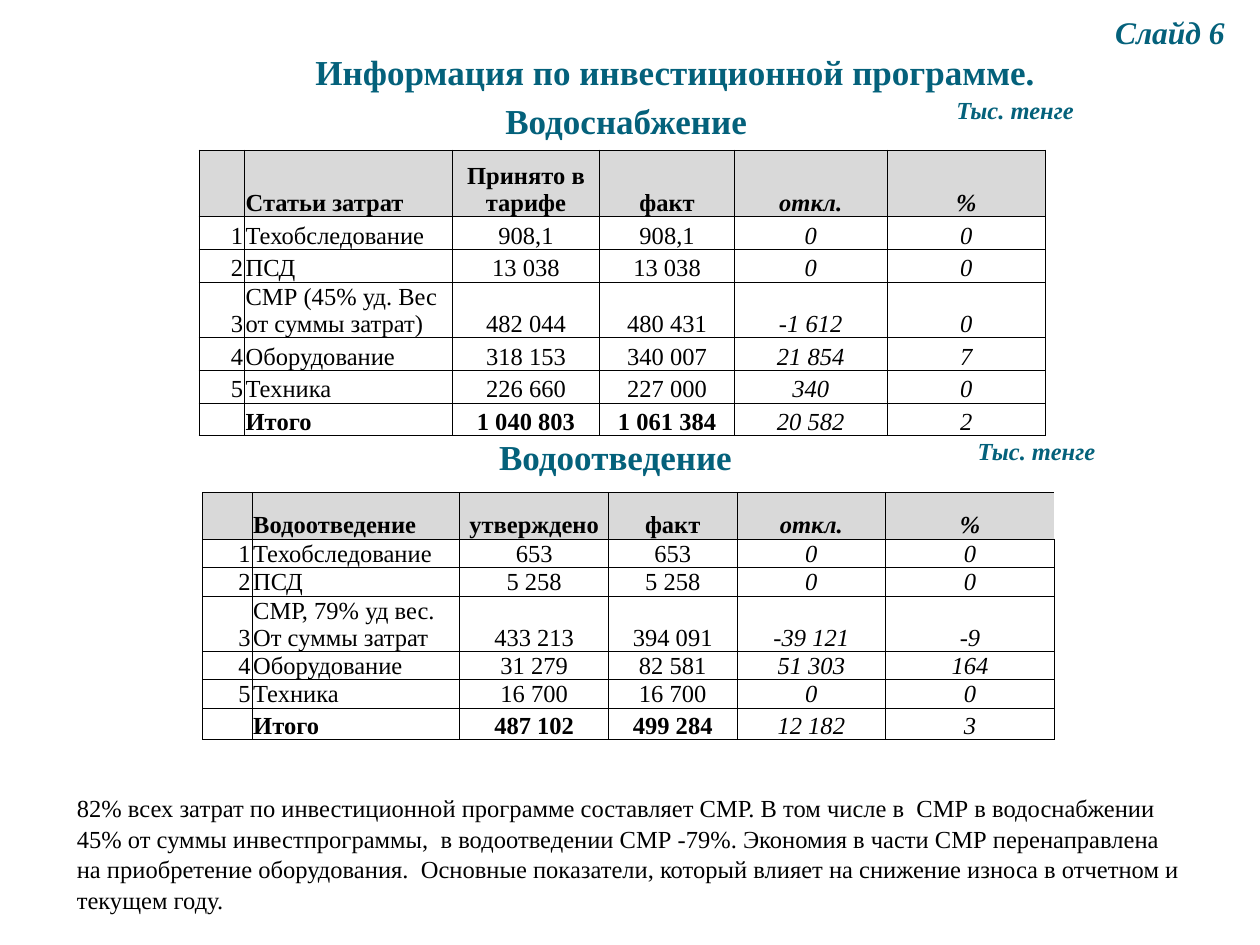
from dataclasses import dataclass

import lxml.etree
import pptx
import pptx.dml.color
import pptx.enum.text
import pptx.oxml.ns
import pptx.util

Inches = pptx.util.Inches
Align = pptx.enum.text.PP_ALIGN
Anchor = pptx.enum.text.MSO_ANCHOR
qn = pptx.oxml.ns.qn


@dataclass(frozen=True)
class Theme:
    face: str = "Times New Roman"
    teal: str = "04617B"
    black: str = "000000"
    grey: str = "D9D9D9"
    head: int = 20
    mark: int = 18
    text: int = 14
    rule: float = 0.5


@dataclass(frozen=True)
class Label:
    text: str
    box: tuple[float, float, float, float]
    size: int
    align: Align
    slant: bool = False


@dataclass(frozen=True)
class Grid:
    left: float
    top: float
    cols: list[float]
    rows: list[float]
    data: list[tuple[str, ...]]
    open_end: bool = False  # header has no line at its right end


THEME = Theme()

TITLE = Label("Информация по инвестиционной программе.",
              (1.61, 0.35, 7.5, 0.47), THEME.head, Align.CENTER)

LABELS = [
    Label("Тыс. тенге", (7.52, 0.52, 1.97, 0.73), THEME.text, Align.JUSTIFY, True),
    Label("Водоотведение", (1.15, 3.16, 7.47, 0.97), THEME.head, Align.CENTER),
    Label("Водоснабжение", (1.15, 0.8, 7.64, 0.35), THEME.head, Align.CENTER),
    Label("Тыс. тенге", (7.69, 3.36, 1.97, 0.47), THEME.text, Align.JUSTIFY, True),
    Label("Слайд 6", (8.78, 0.15, 1.22, 0.24), THEME.mark, Align.JUSTIFY, True),
]

NOTE = (
    "82% всех затрат по инвестиционной программе составляет СМР. "
    "В том числе в  СМР в водоснабжении 45% от суммы инвестпрограммы,  "
    "в водоотведении СМР -79%. Экономия в части СМР перенаправлена "
    "на приобретение оборудования.  Основные показатели, который влияет "
    "на снижение износа в отчетном и текущем году."
)

GRIDS = [
    Grid(1.58, 1.19, [0.36, 1.65, 1.17, 1.07, 1.21, 1.26], [0.53] + [0.26] * 6, [
        ("", "Статьи затрат", "Принято в тарифе", "факт", "откл.", "%"),
        ("1", "Техобследование", "908,1", "908,1", "0", "0"),
        ("2", "ПСД", "13 038", "13 038", "0", "0"),
        ("3", "СМР (45% уд. Вес от суммы затрат)", "482 044", "480 431", "-1 612", "0"),
        ("4", "Оборудование", "318 153", "340 007", "21 854", "7"),
        ("5", "Техника", "226 660", "227 000", "340", "0"),
        ("", "Итого", "1 040 803", "1 061 384", "20 582", "2"),
    ]),
    Grid(1.61, 3.91, [0.39, 1.65, 1.18, 1.02, 1.18, 1.34], [0.37] + [0.2] * 6, [
        ("", "Водоотведение", "утверждено", "факт", "откл.", "%"),
        ("1", "Техобследование", "653", "653", "0", "0"),
        ("2", "ПСД", "5 258", "5 258", "0", "0"),
        ("3", "СМР, 79% уд вес. От суммы затрат", "433 213", "394 091", "-39 121", "-9"),
        ("4", "Оборудование", "31 279", "82 581", "51 303", "164"),
        ("5", "Техника", "16 700", "16 700", "0", "0"),
        ("", "Итого", "487 102", "499 284", "12 182", "3"),
    ], open_end=True),
]


def style(para, size: int, tint: str, bold: bool = False, slant: bool = False) -> None:
    for run in para.runs:
        font = run.font
        font.name, font.size = THEME.face, pptx.util.Pt(size)
        font.bold, font.italic = bold, slant
        font.color.rgb = pptx.dml.color.RGBColor.from_string(tint)


def place(shape, box: tuple[float, float, float, float]) -> None:
    shape.left, shape.top, shape.width, shape.height = map(Inches, box)


def fill_label(shape, label: Label) -> None:
    place(shape, label.box)
    frame = shape.text_frame
    frame.text = label.text
    frame.word_wrap = True
    frame.auto_size = pptx.enum.text.MSO_AUTO_SIZE.NONE
    frame.vertical_anchor = Anchor.MIDDLE
    frame.margin_left = frame.margin_right = Inches(0.07)
    frame.margin_top = frame.margin_bottom = Inches(0.04)
    para = frame.paragraphs[0]
    para.alignment, para.line_spacing = label.align, 0.9
    style(para, label.size, THEME.teal, True, label.slant)


def fill_note(shape) -> None:
    place(shape, (0.51, 6.23, 8.99, 1.04))
    frame = shape.text_frame
    frame.text = NOTE
    frame.word_wrap = True
    frame.auto_size = pptx.enum.text.MSO_AUTO_SIZE.NONE
    para = frame.paragraphs[0]
    props = para._p.get_or_add_pPr()
    props.set("marL", "0")
    props.set("indent", "0")
    lxml.etree.SubElement(props, qn("a:buNone"))
    para.space_before, para.line_spacing = pptx.util.Pt(0), 1.05
    style(para, THEME.text, THEME.black)


def add_lines(cell, open_end: bool) -> None:
    props = cell._tc.get_or_add_tcPr()
    for side in "LRTB":
        line = lxml.etree.SubElement(props, qn(f"a:ln{side}"),
                                     w=str(pptx.util.Pt(THEME.rule)))
        if open_end and side == "R":
            lxml.etree.SubElement(line, qn("a:noFill"))
        else:
            fill = lxml.etree.SubElement(line, qn("a:solidFill"))
            lxml.etree.SubElement(fill, qn("a:srgbClr"), val=THEME.black)


def fill_cell(cell, text: str, row: int, col: int, grid: Grid) -> None:
    head, total = row == 0, row == len(grid.rows) - 1
    add_lines(cell, grid.open_end and head and col == len(grid.cols) - 1)
    if head:
        cell.fill.solid()
        cell.fill.fore_color.rgb = pptx.dml.color.RGBColor.from_string(THEME.grey)
    else:
        cell.fill.background()
    cell.margin_left = cell.margin_right = cell.margin_top = Inches(0.01)
    cell.margin_bottom = 0
    cell.vertical_anchor = Anchor.BOTTOM
    cell.text_frame.text = text
    para = cell.text_frame.paragraphs[0]
    para.alignment = {0: Align.RIGHT, 1: Align.LEFT}.get(col, Align.CENTER)
    if not text:  # keeps a blank cell from stretching its row
        para._p.get_or_add_endParaRPr().set("sz", str(THEME.text * 100))
    style(para, THEME.text, THEME.black, head or (total and col < 4), col >= 4)


def add_grid(slide, grid: Grid) -> None:
    box = (grid.left, grid.top, sum(grid.cols), sum(grid.rows))
    table = slide.shapes.add_table(len(grid.rows), len(grid.cols),
                                   *map(Inches, box)).table
    table.first_row = table.horz_banding = False
    for col, width in zip(table.columns, grid.cols):
        col.width = Inches(width)
    for row, height in zip(table.rows, grid.rows):
        row.height = Inches(height)
    for r, line in enumerate(grid.data):
        for c, text in enumerate(line):
            fill_cell(table.cell(r, c), text, r, c, grid)


def main() -> None:
    deck = pptx.Presentation()
    deck.slide_width, deck.slide_height = Inches(10), Inches(7.5)
    slide = deck.slides.add_slide(deck.slide_layouts[1])

    # Title and closing note
    fill_label(slide.shapes.title, TITLE)
    fill_note(slide.placeholders[1])

    # Headings, units and slide mark
    for label in LABELS:
        fill_label(slide.shapes.add_textbox(0, 0, 0, 0), label)

    # Cost tables
    for grid in GRIDS:
        add_grid(slide, grid)

    deck.save("out.pptx")


if __name__ == "__main__":
    main()
